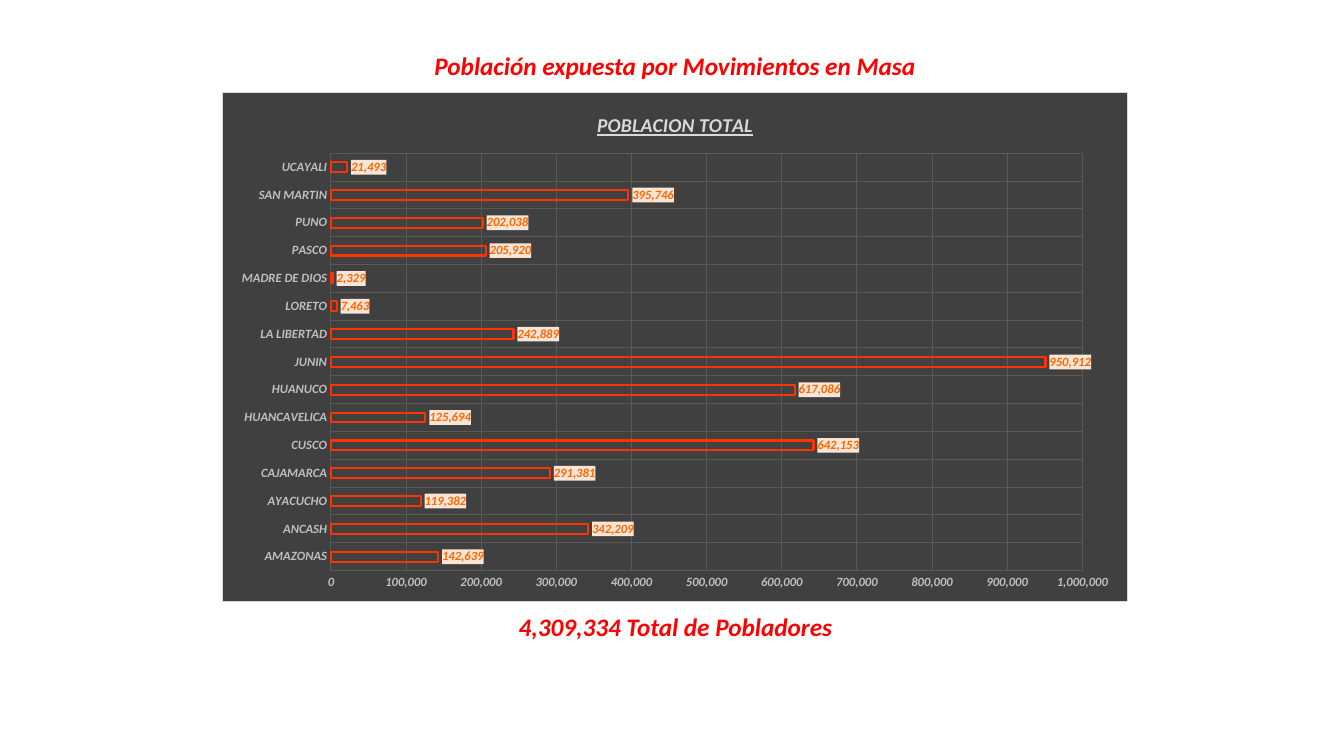
from dataclasses import dataclass

import lxml.etree
import pptx
import pptx.chart.data
import pptx.dml.color
import pptx.enum.chart
import pptx.enum.text
import pptx.oxml
import pptx.oxml.ns
import pptx.util

Inches = pptx.util.Inches
Pt = pptx.util.Pt
RGBColor = pptx.dml.color.RGBColor
qn = pptx.oxml.ns.qn

RED = RGBColor(0xFF, 0x00, 0x00)
BAR_RED = RGBColor(0xFF, 0x33, 0x00)
ORANGE = RGBColor(0xFF, 0x66, 0x00)
PEACH = RGBColor(0xFB, 0xE5, 0xD6)
DARK_GREY = RGBColor(0x40, 0x40, 0x40)
GRID_GREY = RGBColor(0x59, 0x59, 0x59)
AXIS_GREY = RGBColor(0xBF, 0xBF, 0xBF)
LIGHT_GREY = RGBColor(0xD9, 0xD9, 0xD9)
FONT = "Calibri"
NUMBER_FORMAT = "#,##0"

POPULATION = {
    "AMAZONAS": 142639,
    "ANCASH": 342209,
    "AYACUCHO": 119382,
    "CAJAMARCA": 291381,
    "CUSCO": 642153,
    "HUANCAVELICA": 125694,
    "HUANUCO": 617086,
    "JUNIN": 950912,
    "LA LIBERTAD": 242889,
    "LORETO": 7463,
    "MADRE DE DIOS": 2329,
    "PASCO": 205920,
    "PUNO": 202038,
    "SAN MARTIN": 395746,
    "UCAYALI": 21493,
}


@dataclass
class Heading:
    text: str
    left: float
    top: float
    width: float
    height: float = 0.4


HEADINGS = [
    Heading("Población expuesta por Movimientos en Masa", 4.18, 0.45, 5.03),
    Heading("4,309,334 Total de Pobladores", 5.03, 6.02, 3.34),
]


def style_font(font, size: float, color: RGBColor) -> None:
    font.name = FONT
    font.size = Pt(size)
    font.bold = True
    font.italic = True
    font.color.rgb = color


def add_heading(page, heading: Heading) -> None:
    box = page.shapes.add_textbox(Inches(heading.left), Inches(heading.top),
                                  Inches(heading.width), Inches(heading.height))
    box.text_frame.word_wrap = True
    para = box.text_frame.paragraphs[0]
    para.alignment = pptx.enum.text.PP_ALIGN.CENTER
    span = para.add_run()
    span.text = heading.text
    style_font(span.font, 18, RED)


def add_background(text_properties, fill: RGBColor, border: str = "<a:ln><a:noFill/></a:ln>") -> None:
    """Fill a chart part; its shape properties stand just before its text properties."""
    text_properties.addprevious(pptx.oxml.parse_xml(
        f'<c:spPr {pptx.oxml.ns.nsdecls("c", "a")}><a:solidFill><a:srgbClr val="{fill}"/>'
        f'</a:solidFill>{border}</c:spPr>'))


def place_plot(plot_area, **fractions: float) -> None:
    """Fix the inner plot area as fractions of the chart frame."""
    for old_layout in plot_area.findall(qn("c:layout")):
        plot_area.remove(old_layout)
    layout = lxml.etree.Element(qn("c:layout"))
    manual = lxml.etree.SubElement(layout, qn("c:manualLayout"))
    settings = {"layoutTarget": "inner", "xMode": "edge", "yMode": "edge", **fractions}
    for name, value in settings.items():
        lxml.etree.SubElement(manual, qn(f"c:{name}")).set("val", str(value))
    plot_area.insert(0, layout)


def style_axis(axis) -> None:
    axis.major_tick_mark = pptx.enum.chart.XL_TICK_MARK.NONE
    axis.minor_tick_mark = pptx.enum.chart.XL_TICK_MARK.NONE
    axis.format.line.fill.background()
    axis.has_major_gridlines = True
    axis.major_gridlines.format.line.color.rgb = GRID_GREY
    axis.major_gridlines.format.line.width = Pt(0.75)
    style_font(axis.tick_labels.font, 9, AXIS_GREY)


def add_population_chart(page) -> None:
    data = pptx.chart.data.CategoryChartData(number_format=NUMBER_FORMAT)
    data.categories = list(POPULATION)
    data.add_series("POBLACION TOTAL", list(POPULATION.values()))
    chart = page.shapes.add_chart(
        pptx.enum.chart.XL_CHART_TYPE.BAR_CLUSTERED,
        Inches(2.2), Inches(0.91), Inches(8.99), Inches(5.06), data).chart
    chart.has_legend = False
    chart.font.name = FONT
    chart.font.size = Pt(10)

    # Frame and plot area
    space = chart._chartSpace
    add_background(space.find(qn("c:txPr")), DARK_GREY,
                   f'<a:ln w="{Pt(0.75)}"><a:solidFill><a:srgbClr val="{LIGHT_GREY}"/>'
                   '</a:solidFill></a:ln>')
    place_plot(space.chart.plotArea, x=0.12, y=0.12, w=0.83, h=0.82)

    # Title
    chart.has_title = True
    chart.chart_title.include_in_layout = False
    span = chart.chart_title.text_frame.paragraphs[0].add_run()
    span.text = "POBLACION TOTAL"
    style_font(span.font, 14, LIGHT_GREY)
    span.font.underline = True

    # Axes
    for axis in (chart.category_axis, chart.value_axis):
        style_axis(axis)
    chart.value_axis.minimum_scale = 0
    chart.value_axis.maximum_scale = 1000000
    chart.value_axis.major_unit = 100000
    chart.value_axis.tick_labels.number_format = NUMBER_FORMAT
    chart.value_axis.tick_labels.number_format_is_linked = False

    # Bars
    plot = chart.plots[0]
    plot.gap_width = 182
    plot.overlap = -50
    plot.vary_by_categories = False
    series = plot.series[0]
    series.format.fill.background()
    series.format.line.color.rgb = BAR_RED
    series.format.line.width = Pt(1.5)

    # Value labels
    labels = series.data_labels
    labels.show_value = True
    labels.number_format = NUMBER_FORMAT
    labels.number_format_is_linked = False
    labels.position = pptx.enum.chart.XL_LABEL_POSITION.OUTSIDE_END
    style_font(labels.font, 9, ORANGE)
    add_background(labels._element.find(qn("c:txPr")), PEACH)


def main() -> None:
    deck = pptx.Presentation()
    deck.slide_width = Inches(13.33)
    deck.slide_height = Inches(7.5)
    page = deck.slides.add_slide(deck.slide_layouts[6])
    for heading in HEADINGS:
        add_heading(page, heading)
    add_population_chart(page)
    deck.save("out.pptx")


if __name__ == "__main__":
    main()
